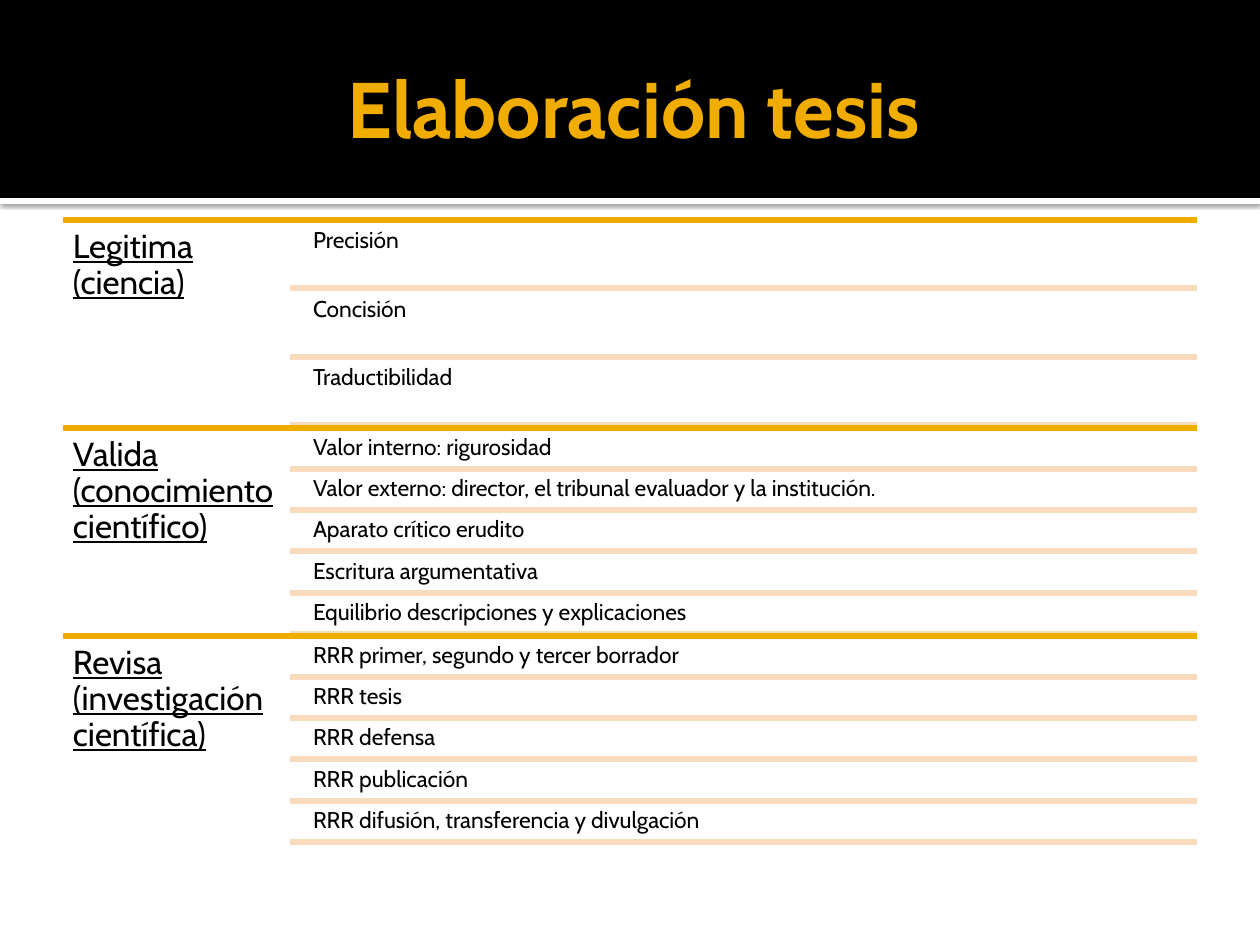
from dataclasses import dataclass

from lxml import etree
from pptx import Presentation
from pptx.dml.color import RGBColor
from pptx.enum.shapes import MSO_CONNECTOR, MSO_SHAPE
from pptx.enum.text import MSO_ANCHOR, MSO_AUTO_SIZE, PP_ALIGN
from pptx.oxml import parse_xml
from pptx.oxml.ns import nsdecls, qn
from pptx.util import Emu, Pt

RECTANGLE = MSO_SHAPE.RECTANGLE
STRAIGHT = MSO_CONNECTOR.STRAIGHT
MIDDLE, TOP = MSO_ANCHOR.MIDDLE, MSO_ANCHOR.TOP
CENTER, LEFT = PP_ALIGN.CENTER, PP_ALIGN.LEFT
NO_AUTOFIT = MSO_AUTO_SIZE.NONE

PX_PER_INCH = 126
SLIDE_WIDTH, SLIDE_HEIGHT = 1260, 945
LEFT_EDGE, RIGHT_EDGE = 63, 1197
LABEL_WIDTH = 227
ITEM_LEFT, ITEM_WIDTH = 307, 890
FIRST_TOP, SECTION_HEIGHT = 220, 208
GAP_SHARE = 0.05  # gap between items, as a share of an item's height


@dataclass(frozen=True)
class Theme:
    font: str = "Cabin"
    accent: RGBColor = RGBColor(0xF0, 0xAD, 0x00)
    divider: RGBColor = RGBColor(0xF8, 0xDB, 0xBD)
    black: RGBColor = RGBColor(0, 0, 0)
    white: RGBColor = RGBColor(255, 255, 255)
    title_size: float = 45
    label_size: float = 19
    item_size: float = 13
    rule_width: float = 3.78


@dataclass(frozen=True)
class Box:
    left: int
    top: int
    width: int
    height: int


@dataclass(frozen=True)
class TextStyle:
    size: float
    color: RGBColor
    insets: tuple[int, int, int, int]  # left, top, right, bottom
    bold: bool = False
    underline: bool = False
    align: PP_ALIGN = LEFT
    anchor: MSO_ANCHOR = TOP
    line_spacing: float = 0.9


@dataclass(frozen=True)
class Section:
    label: str
    items: tuple[str, ...]


THEME = Theme()
TITLE_STYLE = TextStyle(THEME.title_size, THEME.accent, (13, 6, 6, 6), bold=True,
                        align=CENTER, anchor=MIDDLE, line_spacing=1.0)
LABEL_STYLE = TextStyle(THEME.label_size, THEME.black, (10, 10, 10, 10), underline=True)
ITEM_STYLE = TextStyle(THEME.item_size, THEME.black, (6, 6, 6, 6))

SECTIONS = (
    Section("Legitima (ciencia)", ("Precisión", "Concisión", "Traductibilidad")),
    Section("Valida (conocimiento científico)", (
        "Valor interno: rigurosidad",
        "Valor externo: director, el tribunal evaluador y la institución.",
        "Aparato crítico erudito",
        "Escritura argumentativa",
        "Equilibrio descripciones y explicaciones",
    )),
    Section("Revisa (investigación científica)", (
        "RRR primer, segundo y tercer borrador",
        "RRR tesis",
        "RRR defensa",
        "RRR publicación",
        "RRR difusión, transferencia y divulgación",
    )),
)


def px(length: int) -> Emu:
    return Emu(round(length * 914400 / PX_PER_INCH))


def place(box: Box) -> tuple[Emu, Emu, Emu, Emu]:
    return px(box.left), px(box.top), px(box.width), px(box.height)


def write(shape, text: str, style: TextStyle) -> None:
    frame = shape.text_frame
    frame.text = text
    frame.word_wrap = True
    frame.auto_size = NO_AUTOFIT
    frame.vertical_anchor = style.anchor
    (frame.margin_left, frame.margin_top,
     frame.margin_right, frame.margin_bottom) = map(px, style.insets)
    para = frame.paragraphs[0]
    para.alignment = style.align
    para.line_spacing = style.line_spacing
    font = para.runs[0].font
    font.name = THEME.font
    font.size = Pt(style.size)
    font.bold = style.bold
    font.underline = style.underline
    font.color.rgb = style.color


def add_text(page, box: Box, text: str, style: TextStyle) -> None:
    write(page.shapes.add_textbox(*place(box)), text, style)


def add_band(page, box: Box, color: RGBColor):
    band = page.shapes.add_shape(RECTANGLE, *place(box))
    band.shadow.inherit = False
    band.fill.solid()
    band.fill.fore_color.rgb = color
    band.line.fill.background()
    return band


def add_soft_shadow(shape) -> None:
    effects = shape.element.spPr.find(qn("a:effectLst"))
    effects.append(parse_xml(
        f'<a:outerShdw {nsdecls("a")} blurRad="{Pt(2.5)}" dist="{Pt(0.8)}" '
        'dir="5400000" algn="tl" rotWithShape="0"><a:srgbClr val="000000">'
        '<a:alpha val="60000"/></a:srgbClr></a:outerShdw>'))


def add_rule(page, left: int, top: int, color: RGBColor) -> None:
    """Draw a horizontal line from left to the right edge of the list."""
    rule = page.shapes.add_connector(STRAIGHT, px(left), px(top), px(RIGHT_EDGE), px(top))
    rule.line.color.rgb = color
    rule.line.width = Pt(THEME.rule_width)
    etree.SubElement(rule.element.spPr, qn("a:effectLst"))


def add_header(page, text: str) -> None:
    strip = add_band(page, Box(0, 198, SLIDE_WIDTH, 6), THEME.white)
    add_soft_shadow(strip)
    banner = add_band(page, Box(0, 0, SLIDE_WIDTH, 198), THEME.black)
    title = page.shapes.title
    title.left, title.top, title.width, title.height = place(Box(63, 21, 1134, 173))
    write(title, text, TITLE_STYLE)
    banner.element.addnext(title.element)


def add_section(page, top: int, section: Section) -> None:
    """Items fill the section height, with a gap before, between and after them."""
    count = len(section.items)
    height = SECTION_HEIGHT / (count + GAP_SHARE * (count + 1))
    gap = height * GAP_SHARE
    add_rule(page, LEFT_EDGE, top, THEME.accent)
    add_text(page, Box(LEFT_EDGE, top, LABEL_WIDTH, SECTION_HEIGHT),
             section.label, LABEL_STYLE)
    for index, item in enumerate(section.items):
        item_top = round(top + gap + index * (height + gap))
        add_text(page, Box(ITEM_LEFT, item_top, ITEM_WIDTH, round(height)), item, ITEM_STYLE)
        add_rule(page, LEFT_EDGE + LABEL_WIDTH, round(item_top + height), THEME.divider)


def main() -> None:
    deck = Presentation()
    deck.slide_width, deck.slide_height = px(SLIDE_WIDTH), px(SLIDE_HEIGHT)
    page = deck.slides.add_slide(deck.slide_layouts[5])
    add_header(page, "Elaboración tesis")
    for index, section in enumerate(SECTIONS):
        add_section(page, FIRST_TOP + index * SECTION_HEIGHT, section)
    deck.save("out.pptx")


if __name__ == "__main__":
    main()
